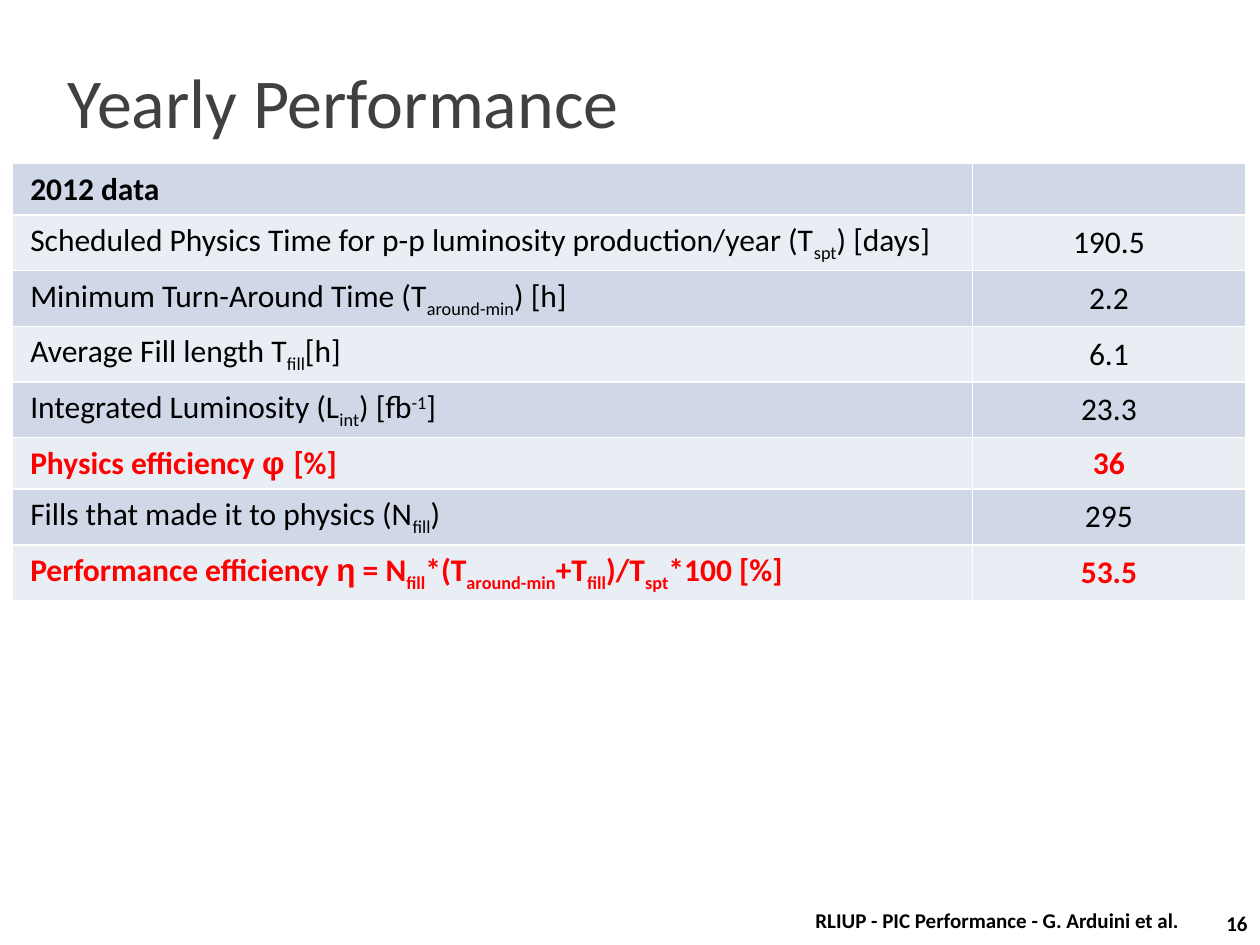
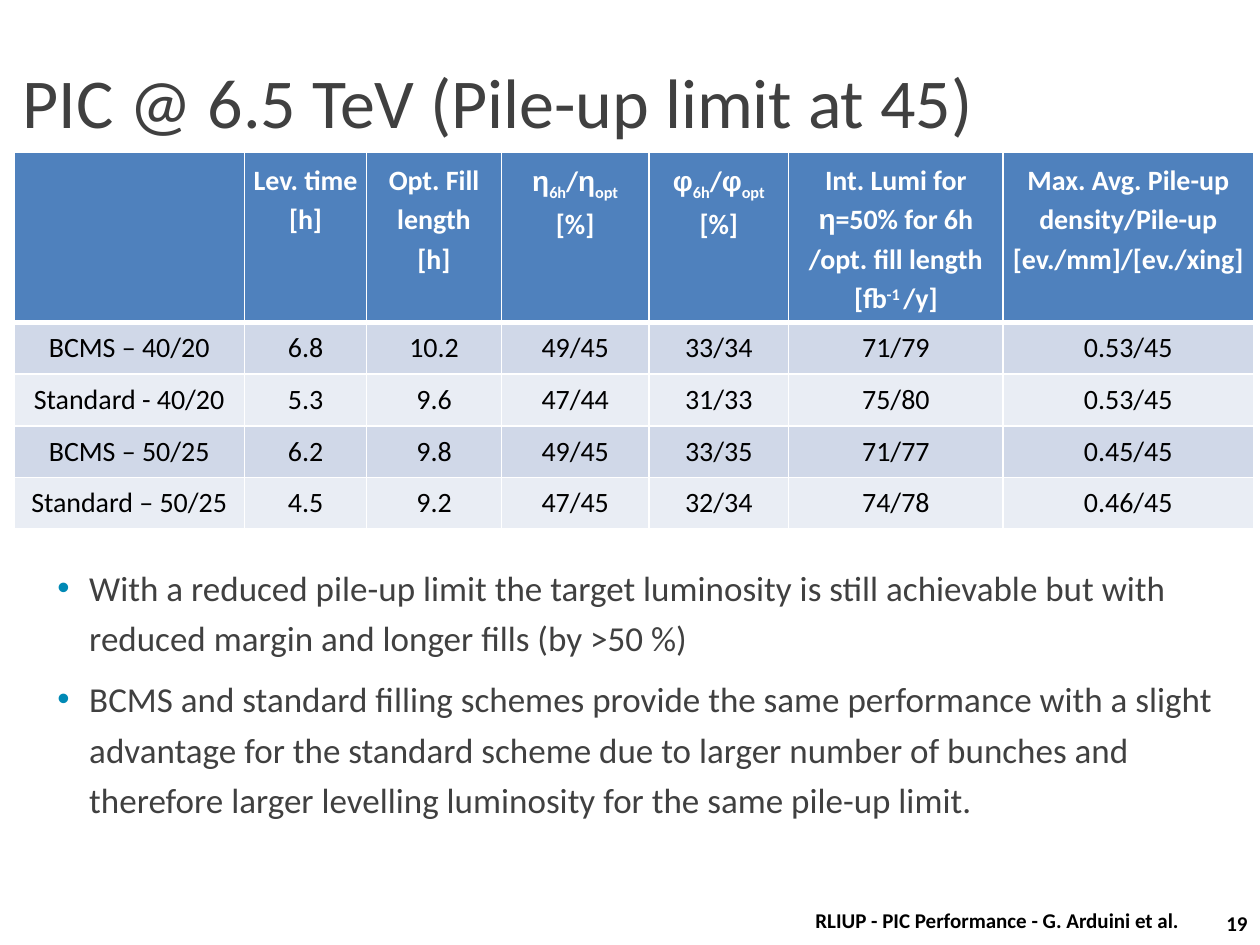
from dataclasses import dataclass
from typing import Any

from lxml import etree
from pptx import Presentation
from pptx.dml.color import RGBColor
from pptx.enum.text import MSO_ANCHOR, MSO_AUTO_SIZE, PP_ALIGN
from pptx.oxml.ns import qn
from pptx.util import Cm, Pt

LEFT, CENTER, RIGHT = PP_ALIGN.LEFT, PP_ALIGN.CENTER, PP_ALIGN.RIGHT
TOP, MIDDLE = MSO_ANCHOR.TOP, MSO_ANCHOR.MIDDLE
NO_AUTOFIT = MSO_AUTO_SIZE.NONE
TITLE_ONLY = 5
BASELINES = {"_": "-25000", "^": "30000"}
GREEK = "φη"


@dataclass(frozen=True)
class Theme:
    font: str = "Calibri"
    greek_font: str = "Arial"
    ink: str = "000000"
    grey: str = "404040"
    white: str = "FFFFFF"
    alert: str = "FF0000"
    header: str = "4F81BD"
    band_dark: str = "D0D8E8"
    band_light: str = "E9EDF4"
    bullet: str = "0089B5"
    title_size: int = 40
    body_size: int = 20
    yearly_size: int = 18
    scheme_size: int = 16
    footer_size: int = 12


THEME = Theme()


@dataclass(frozen=True)
class Area:
    left: float
    top: float
    width: float
    height: float

    def lengths(self) -> tuple[Cm, Cm, Cm, Cm]:
        return Cm(self.left), Cm(self.top), Cm(self.width), Cm(self.height)


@dataclass(frozen=True)
class Look:
    size: int
    color: str = THEME.ink
    bold: bool = False
    align: Any = LEFT
    anchor: Any = MIDDLE
    side_inset: float = 0.25
    edge_inset: float = 0.13
    line_spacing: float = 1.0
    space_before: int = 0
    bulleted: bool = False


@dataclass(frozen=True)
class Grid:
    left: float
    top: float
    columns: tuple[float, ...]
    header_height: float
    row_height: float
    rows: tuple[tuple[str, ...], ...]


TITLE = Look(THEME.title_size, THEME.grey, side_inset=0.1, edge_inset=0)
BODY = Look(THEME.body_size, THEME.grey, anchor=TOP, edge_inset=0,
            line_spacing=1.2, space_before=6, bulleted=True)
FOOTER = Look(THEME.footer_size, bold=True, align=CENTER)
NUMBER = Look(THEME.footer_size, bold=True, align=RIGHT, edge_inset=0)
SCHEME_HEADER = Look(THEME.scheme_size, THEME.white, True, CENTER, TOP,
                     side_inset=0.1, line_spacing=1.15)
SCHEME_CELL = Look(THEME.scheme_size, align=CENTER)

FOOTER_AREA = Area(16.08, 18.03, 8.05, 1.02)
NUMBER_AREA = Area(24.13, 18.16, 1.27, 0.89)
BODY_AREA = Area(0.91, 11.25, 23.98, 1.35)

YEARLY = Grid(0.25, 3.3, (19.35, 5.51), 1.02, 1.02, (
    ("2012 data", ""),
    ("Scheduled Physics Time for p-p luminosity production/year (T|_spt|) [days]", "190.5"),
    ("Minimum Turn-Around Time (T|_around-min|) [h]", "2.2"),
    ("Average Fill length T|_fill|[h]", "6.1"),
    ("Integrated Luminosity (L|_int|) [fb|^-1|]", "23.3"),
    ("Physics efficiency |φ |[%]", "36"),
    ("Fills that made it to physics (N|_fill|)", "295"),
    ("Performance efficiency |η| = N|_fill|*(T|_around-min|+T|_fill|)/T|_spt|*100 [%]", "53.5"),
))

SCHEMES = Grid(0.28, 3.07, (4.65, 2.46, 2.72, 2.97, 2.82, 4.32, 5.05), 3.33, 1.04, (
    ("", "Lev. time\n[h]", "Opt. Fill length\n[h]", "η|_6h|/|η|_opt\n[%]",
     "φ|_6h|/|φ|_opt\n[%]",
     "Int. Lumi for |η|=50% for 6h /opt. fill length\n[fb|^-1 |/y]",
     "Max. Avg. Pile-up density/Pile-up\n[ev./mm]/[ev./xing]"),
    ("BCMS – 40/20", "6.8", "10.2", "49/45", "33/34", "71/79", "0.53/45"),
    ("Standard - 40/20", "5.3", "9.6", "47/44", "31/33", "75/80", "0.53/45"),
    ("BCMS – 50/25", "6.2", "9.8", "49/45", "33/35", "71/77", "0.45/45"),
    ("Standard – 50/25", "4.5", "9.2", "47/45", "32/34", "74/78", "0.46/45"),
))

CONCLUSIONS = (
    "With a reduced pile-up limit the target luminosity is still achievable but with "
    "reduced margin and longer fills (by >50 %)\n"
    "BCMS and standard filling schemes provide the same performance with a slight "
    "advantage for the standard scheme due to larger number of bunches and therefore "
    "larger levelling luminosity for the same pile-up limit."
)


def apply(target: Any, values: dict[str, Any]) -> None:
    for name, value in values.items():
        setattr(target, name, value)


def add_bullet(para: Any) -> None:
    properties = para._p.get_or_add_pPr()
    apply_indent = {"marL": str(Cm(0.64)), "indent": str(Cm(-0.64))}
    for name, value in apply_indent.items():
        properties.set(name, value)
    color = etree.SubElement(properties, qn("a:buClr"))
    etree.SubElement(color, qn("a:srgbClr"), val=THEME.bullet)
    etree.SubElement(properties, qn("a:buFont"), typeface=THEME.greek_font)
    etree.SubElement(properties, qn("a:buChar"), char="•")


def write_spans(para: Any, markup: str, look: Look) -> None:
    for piece in filter(None, markup.split("|")):
        mark = piece[0]
        span = para.add_run()
        span.text = piece[1:] if mark in BASELINES else piece
        apply(span.font, {
            "name": THEME.greek_font if mark in GREEK else THEME.font,
            "size": Pt(look.size),
            "bold": look.bold,
        })
        span.font.color.rgb = RGBColor.from_string(look.color)
        if mark in BASELINES:
            span._r.get_or_add_rPr().set("baseline", BASELINES[mark])


def write_text(frame: Any, markup: str, look: Look) -> None:
    for index, line in enumerate(markup.split("\n")):
        para = frame.add_paragraph() if index else frame.paragraphs[0]
        if look.bulleted:
            add_bullet(para)
        apply(para, {
            "alignment": look.align,
            "line_spacing": look.line_spacing,
            "space_before": Pt(look.space_before if index else 0),
        })
        write_spans(para, line, look)


def insets(look: Look) -> dict[str, Any]:
    side, edge = Cm(look.side_inset), Cm(look.edge_inset)
    return {"margin_left": side, "margin_right": side,
            "margin_top": edge, "margin_bottom": edge}


def fill_box(box: Any, markup: str, look: Look) -> None:
    frame = box.text_frame
    apply(frame, {"word_wrap": True, "auto_size": NO_AUTOFIT,
                  "vertical_anchor": look.anchor, **insets(look)})
    write_text(frame, markup, look)


def add_text(page: Any, area: Area, markup: str, look: Look) -> None:
    fill_box(page.shapes.add_textbox(*area.lengths()), markup, look)


def add_page(deck: Any, title: str, area: Area, number: int) -> Any:
    page = deck.slides.add_slide(deck.slide_layouts[TITLE_ONLY])
    box = page.shapes.title
    apply(box, dict(zip(("left", "top", "width", "height"), area.lengths())))
    fill_box(box, title, TITLE)
    add_text(page, FOOTER_AREA, "RLIUP - PIC Performance - G. Arduini et al.", FOOTER)
    add_text(page, NUMBER_AREA, str(number), NUMBER)
    return page


def set_borders(cell: Any, top: int, bottom: int) -> None:
    properties = cell._tc.get_or_add_tcPr()
    for side, width in {"L": 1, "R": 1, "T": top, "B": bottom}.items():
        line = etree.SubElement(properties, qn(f"a:ln{side}"), w=str(Pt(width)))
        fill = etree.SubElement(line, qn("a:solidFill"))
        etree.SubElement(fill, qn("a:srgbClr"), val=THEME.white)


def draw_cell(cell: Any, markup: str, look: Look, color: str) -> None:
    cell.fill.solid()
    cell.fill.fore_color.rgb = RGBColor.from_string(color)
    apply(cell, {"vertical_anchor": look.anchor, **insets(look)})
    if markup:
        write_text(cell.text_frame, markup, look)


def yearly_look(row: int, column: int) -> Look:
    key_result = row in (5, 7)
    return Look(THEME.yearly_size, THEME.alert if key_result else THEME.ink,
                key_result or row == 0, CENTER if column else LEFT, side_inset=0.36)


def scheme_look(row: int, column: int) -> Look:
    return SCHEME_CELL if row else SCHEME_HEADER


def add_grid(page: Any, grid: Grid, look_at: Any, has_header: bool) -> None:
    heights = [grid.header_height] + [grid.row_height] * (len(grid.rows) - 1)
    area = Area(grid.left, grid.top, sum(grid.columns), sum(heights))
    table = page.shapes.add_table(len(heights), len(grid.columns), *area.lengths()).table
    apply(table, {"first_row": has_header, "horz_banding": False})
    for column, width in zip(table.columns, grid.columns):
        column.width = Cm(width)
    for row, height in zip(table.rows, heights):
        row.height = Cm(height)
    bands = (THEME.band_dark, THEME.band_light)
    for row, texts in enumerate(grid.rows):
        is_header = has_header and row == 0
        color = THEME.header if is_header else bands[(row - has_header) % 2]
        for column, markup in enumerate(texts):
            cell = table.cell(row, column)
            set_borders(cell, 3 if has_header and row == 1 else 1, 3 if is_header else 1)
            draw_cell(cell, markup, look_at(row, column), color)


def main() -> None:
    deck = Presentation()
    apply(deck, {"slide_width": Cm(25.4), "slide_height": Cm(19.05)})

    yearly = add_page(deck, "Yearly Performance", Area(1.27, 0.76, 22.86, 2.54), 16)
    add_grid(yearly, YEARLY, yearly_look, has_header=False)

    schemes = add_page(deck, "PIC @ 6.5 TeV (Pile-up limit at 45)",
                       Area(0.36, 0.76, 24.51, 2.54), 19)
    add_grid(schemes, SCHEMES, scheme_look, has_header=True)
    add_text(schemes, BODY_AREA, CONCLUSIONS, BODY)

    deck.save("out.pptx")


if __name__ == "__main__":
    main()
